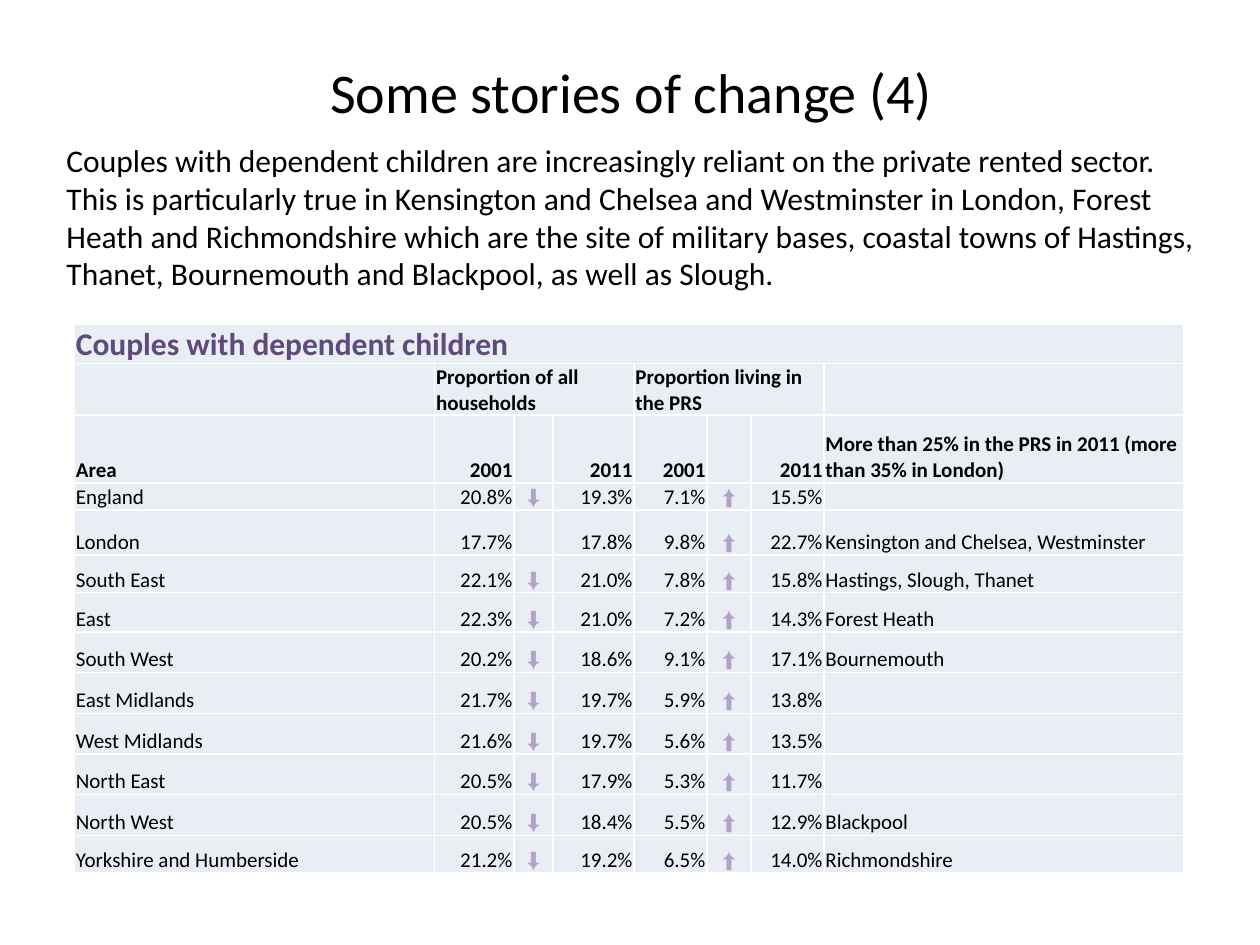
from lxml import etree
from pptx import Presentation
from pptx.dml.color import RGBColor
from pptx.enum.text import MSO_ANCHOR as ANCHOR, PP_ALIGN as ALIGN
from pptx.oxml.ns import qn
from pptx.util import Cm, Pt

BLACK = RGBColor(0x00, 0x00, 0x00)
PURPLE = RGBColor(0x60, 0x4A, 0x7B)
LILAC = RGBColor(0xB3, 0xA2, 0xC7)
PALE = RGBColor(0xE9, 0xED, 0xF4)
WHITE = RGBColor(0xFF, 0xFF, 0xFF)
FONT = "Calibri"
DOWN, UP = "⬇", "⬆"


def add_run(p, text, size, color=BLACK, bold=False):
    r = p.add_run()
    r.text = text
    r.font.name = FONT
    r.font.size = Pt(size)
    r.font.bold = bold
    r.font.color.rgb = color


def set_borders(cell):
    tcPr = cell._tc.get_or_add_tcPr()
    for i, side in enumerate(("lnL", "lnR", "lnT", "lnB")):
        ln = etree.Element(qn(f"a:{side}"), w=str(Pt(1)))
        fill = etree.SubElement(ln, qn("a:solidFill"))
        etree.SubElement(fill, qn("a:srgbClr"), val=str(WHITE))
        tcPr.insert(i, ln)


prs = Presentation()
prs.slide_width, prs.slide_height = Cm(25.4), Cm(19.05)
s = prs.slides.add_slide(prs.slide_layouts[6])

# Title
sp = s.shapes.add_textbox(Cm(1.3), Cm(0.53), Cm(22.86), Cm(2.6))
tf = sp.text_frame
tf.word_wrap = True
tf.vertical_anchor = ANCHOR.MIDDLE
p = tf.paragraphs[0]
p.alignment = ALIGN.CENTER
add_run(p, "Some stories of change (4)", 32)

# Introduction
sp = s.shapes.add_textbox(Cm(1.09), Cm(2.72), Cm(23.4), Cm(3.33))
tf = sp.text_frame
tf.word_wrap = True
add_run(tf.paragraphs[0],
        "Couples with dependent children are increasingly reliant on the private "
        "rented sector. This is particularly true in Kensington and Chelsea and "
        "Westminster in London, Forest Heath and Richmondshire which are the site "
        "of military bases, coastal towns of Hastings, Thanet, Bournemouth and "
        "Blackpool, as well as Slough.", 18)

# Table content: three heading rows, then one row for each area
HEADINGS = 3
rows = [
    ("Couples with dependent children", "", "", "", "", "", "", ""),
    ("", "Proportion of all households", "", "", "Proportion living in the PRS", "", "", ""),
    ("Area", "2001", "", "2011", "2001", "", "2011",
     "More than 25% in the PRS in 2011 (more than 35% in London)"),
    ("England", "20.8%", DOWN, "19.3%", "7.1%", UP, "15.5%", ""),
    ("London", "17.7%", "", "17.8%", "9.8%", UP, "22.7%", "Kensington and Chelsea, Westminster"),
    ("South East", "22.1%", DOWN, "21.0%", "7.8%", UP, "15.8%", "Hastings, Slough, Thanet"),
    ("East", "22.3%", DOWN, "21.0%", "7.2%", UP, "14.3%", "Forest Heath"),
    ("South West", "20.2%", DOWN, "18.6%", "9.1%", UP, "17.1%", "Bournemouth"),
    ("East Midlands", "21.7%", DOWN, "19.7%", "5.9%", UP, "13.8%", ""),
    ("West Midlands", "21.6%", DOWN, "19.7%", "5.6%", UP, "13.5%", ""),
    ("North East", "20.5%", DOWN, "17.9%", "5.3%", UP, "11.7%", ""),
    ("North West", "20.5%", DOWN, "18.4%", "5.5%", UP, "12.9%", "Blackpool"),
    ("Yorkshire and Humberside", "21.2%", DOWN, "19.2%", "6.5%", UP, "14.0%", "Richmondshire"),
]
widths = [7.26, 1.6, 0.79, 1.63, 1.47, 0.89, 1.47, 7.26]
heights = [0.46, 0.46, 1.37, 0.46, 0.91, 0.76, 0.79] + [0.82] * 5 + [0.76]
aligns = [ALIGN.LEFT, ALIGN.RIGHT, ALIGN.CENTER, ALIGN.RIGHT,
          ALIGN.RIGHT, ALIGN.CENTER, ALIGN.RIGHT, ALIGN.LEFT]

# Table grid
table = s.shapes.add_table(len(rows), len(widths), Cm(1.5), Cm(6.53),
                           Cm(sum(widths)), Cm(sum(heights))).table
table.first_row = table.horz_banding = False
for column, width in zip(table.columns, widths):
    column.width = Cm(width)
for row, height in zip(table.rows, heights):
    row.height = Cm(height)

# Table cells
for i, row in enumerate(rows):
    for j, text in enumerate(row):
        cell = table.cell(i, j)
        cell.margin_left = cell.margin_right = cell.margin_top = Cm(0.03)
        cell.margin_bottom = 0
        cell.vertical_anchor = ANCHOR.BOTTOM
        cell.fill.solid()
        cell.fill.fore_color.rgb = PALE
        set_borders(cell)
        p = cell.text_frame.paragraphs[0]
        p.alignment = ALIGN.LEFT if i < 2 else aligns[j]
        if text:
            color = PURPLE if i == 0 else LILAC if text in (DOWN, UP) else BLACK
            add_run(p, text, 18 if i == 0 else 12, color, i < HEADINGS)
        else:
            # Keep empty cells from stretching their row
            p._p.get_or_add_endParaRPr().set("sz", "1200")

# Merged headings
for i, first, last in ((0, 0, 7), (1, 1, 3), (1, 4, 6)):
    table.cell(i, first).merge(table.cell(i, last))

prs.save("out.pptx")
